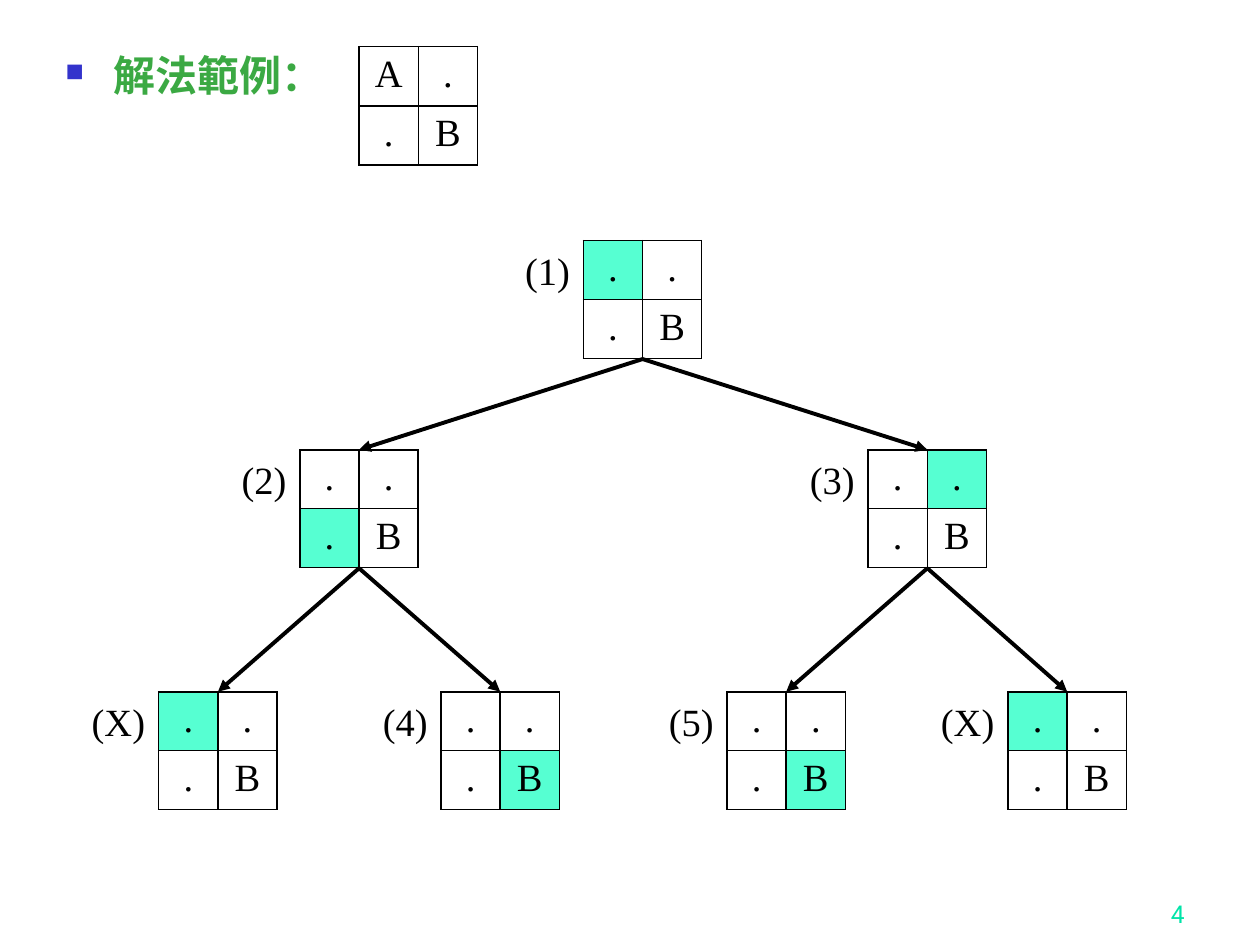
"""Builds a slide with a search tree of two-by-two boards."""
from lxml import etree
from pptx import Presentation
from pptx.dml import color
from pptx.enum import shapes, text
from pptx.oxml import ns
from pptx.util import Inches, Pt

BLACK = color.RGBColor(0x00, 0x00, 0x00)
WHITE = color.RGBColor(0xFF, 0xFF, 0xFF)
MINT = color.RGBColor(0x56, 0xFF, 0xD2)
GREEN = color.RGBColor(0x3B, 0xA9, 0x43)
TEAL = color.RGBColor(0x00, 0xE4, 0xA8)
BLUE = color.RGBColor(0x33, 0x33, 0xCC)
SERIF = "Times New Roman"
SIDE = 0.47


def write(para, words, size=22, tint=BLACK, face=SERIF, bold=False):
    run = para.add_run()
    run.text = words
    run.font.size = Pt(size)
    run.font.name = face
    run.font.bold = bold
    run.font.color.rgb = tint


def board(left, top, marks, high, lit=None):
    frame = slide.shapes.add_table(
        2, 2, Inches(left), Inches(top), Inches(2 * SIDE), Inches(2 * high))
    grid = frame.table
    grid.first_row = grid.horz_banding = False
    for i in range(2):
        grid.columns[i].width = Inches(SIDE)
        grid.rows[i].height = Inches(high)
    for i, cell in enumerate(grid.iter_cells()):
        para = cell.text_frame.paragraphs[0]
        para.alignment = text.PP_ALIGN.CENTER
        write(para, marks[i])
        cell.fill.solid()
        cell.fill.fore_color.rgb = MINT if i == lit else WHITE
        props = cell._tc.get_or_add_tcPr()
        for spot, edge in enumerate(("lnL", "lnR", "lnT", "lnB")):
            line = etree.Element(ns.qn("a:" + edge), w=str(Pt(1)))
            fill = etree.SubElement(line, ns.qn("a:solidFill"))
            etree.SubElement(fill, ns.qn("a:srgbClr"), val=str(BLACK))
            props.insert(spot, line)


deck = Presentation()
deck.slide_width = Inches(10)
deck.slide_height = Inches(7.5)
slide = deck.slides.add_slide(deck.slide_layouts[6])

box = slide.shapes.add_textbox(Inches(7.42), Inches(6.92), Inches(2.08), Inches(0.5))
box.text_frame.word_wrap = True
box.text_frame.vertical_anchor = text.MSO_ANCHOR.BOTTOM
para = box.text_frame.paragraphs[0]
para.alignment = text.PP_ALIGN.RIGHT
write(para, "4", 14, TEAL, "Roboto")

box = slide.shapes.add_textbox(Inches(0.42), Inches(0.39), Inches(8.83), Inches(6.51))
box.text_frame.word_wrap = True
para = box.text_frame.paragraphs[0]
para.line_spacing = 0.9
para.space_before = Pt(5)
props = para._p.get_or_add_pPr()
props.set("marL", str(Inches(0.38)))
props.set("indent", str(Inches(-0.38)))
tint = etree.SubElement(props, ns.qn("a:buClr"))
etree.SubElement(tint, ns.qn("a:srgbClr"), val=str(BLUE))
etree.SubElement(props, ns.qn("a:buSzPct"), val="60000")
etree.SubElement(props, ns.qn("a:buChar"), char="■")
write(para, "解法範例：", 24, GREEN, bold=True)

board(2.85, 0.37, "A..B", SIDE)

nodes = [
    ("(1)", 4.63, 1.91, 0),
    ("(2)", 2.38, 3.57, 2),
    ("(3)", 6.89, 3.57, 1),
    ("(X)", 1.26, 5.49, 0),
    ("(4)", 3.5, 5.49, 3),
    ("(5)", 5.77, 5.49, 3),
    ("(X)", 8, 5.49, 0),
]
for i, (name, left, top, lit) in enumerate(nodes):
    board(left, top, "...B", 0.44, lit)
    wide = 0.63 if name == "(X)" else 0.56
    box = slide.shapes.add_textbox(
        Inches(left - wide), Inches(top), Inches(wide), Inches(0.47))
    box.text_frame.word_wrap = False
    write(box.text_frame.paragraphs[0], name)
    if i == 0:
        continue
    root = nodes[(i - 1) // 2]
    link = slide.shapes.add_connector(
        shapes.MSO_CONNECTOR.STRAIGHT,
        Inches(root[1] + SIDE), Inches(root[2] + 2 * SIDE),
        Inches(left + SIDE), Inches(top))
    link.line.color.rgb = BLACK
    link.line.width = Pt(2.25)
    etree.SubElement(link.line._get_or_add_ln(), ns.qn("a:tailEnd"), type="triangle")
    etree.SubElement(link._element.spPr, ns.qn("a:effectLst"))

deck.save("out.pptx")
